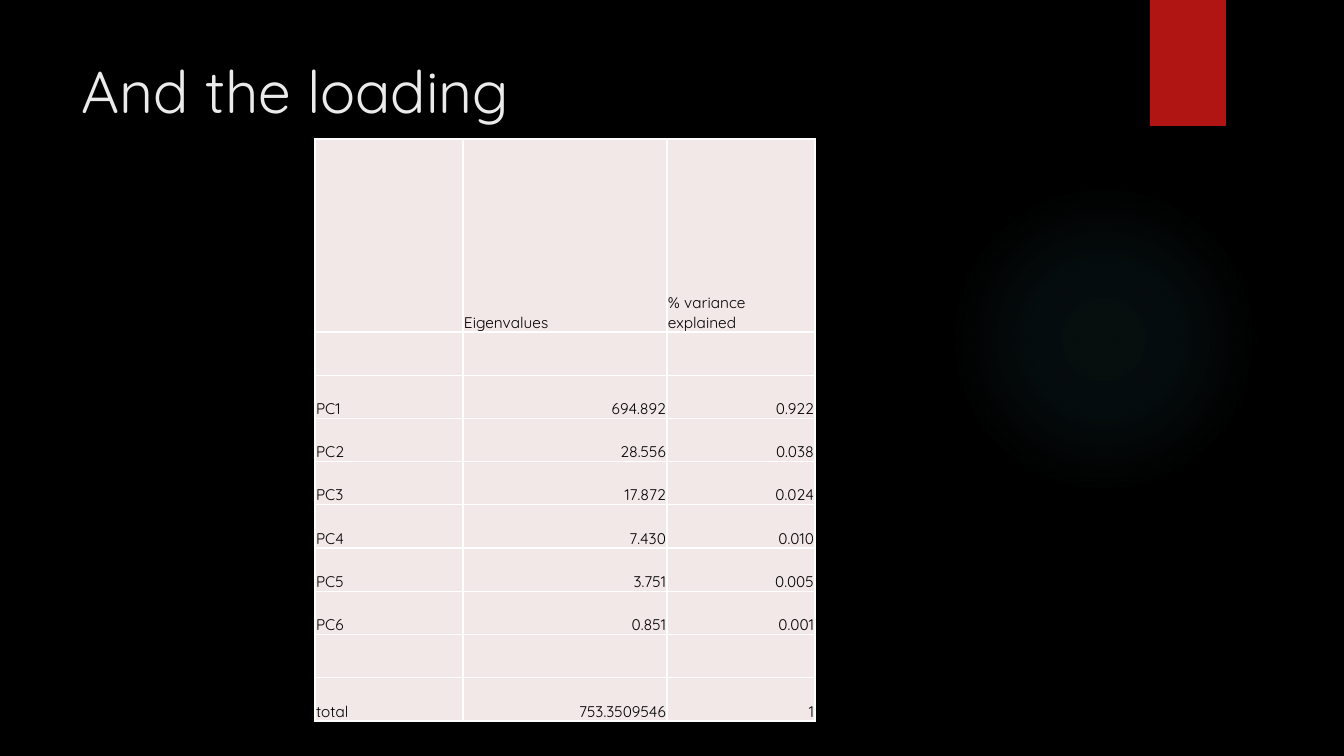
from pptx import Presentation
from pptx.dml.color import RGBColor
from pptx.enum.shapes import MSO_SHAPE
from pptx.enum.text import MSO_ANCHOR, PP_ALIGN
from pptx.oxml import parse_xml
from pptx.oxml.ns import nsdecls
from pptx.util import Pt

RECTANGLE, OVAL = MSO_SHAPE.RECTANGLE, MSO_SHAPE.OVAL
TOP, BOTTOM = MSO_ANCHOR.TOP, MSO_ANCHOR.BOTTOM
LEFT, RIGHT = PP_ALIGN.LEFT, PP_ALIGN.RIGHT
PX = 914400 / 100.8  # EMU per pixel


def rgb(hex_code):
    return RGBColor.from_string(hex_code)


def write(frame, text, size, color, align=LEFT, font="Quicksand"):
    paragraph = frame.paragraphs[0]
    paragraph.alignment = align
    run = paragraph.add_run()
    run.text = text
    run.font.size = Pt(size)
    run.font.name = font
    run.font.color.rgb = rgb(color)


prs = Presentation()
prs.slide_width, prs.slide_height = round(1344 * PX), round(756 * PX)
slide = prs.slides.add_slide(prs.slide_layouts[6])
slide.background.fill.solid()
slide.background.fill.fore_color.rgb = rgb("000000")

# Faint round glow
glow = slide.shapes.add_shape(OVAL, *[round(v * PX) for v in (949, 184, 310, 310)])
stops = "".join(
    f'<a:gs pos="{position * 1000}"><a:srgbClr val="50B9C1">'
    f'<a:alpha val="{opacity * 1000}"/></a:srgbClr></a:gs>'
    for position, opacity in [(0, 7), (36, 6), (69, 0)]
)
glow._element.spPr.append(parse_xml(
    f'<a:gradFill {nsdecls("a")}><a:gsLst>{stops}</a:gsLst><a:path path="circle">'
    '<a:fillToRect l="50000" t="50000" r="50000" b="50000"/></a:path></a:gradFill>'
))
glow.line.fill.background()
glow.shadow.inherit = False

# Red ribbon
ribbon = slide.shapes.add_shape(RECTANGLE, *[round(v * PX) for v in (1150, 0, 76, 126)])
ribbon.fill.solid()
ribbon.fill.fore_color.rgb = rgb("B01513")
ribbon.line.fill.background()
ribbon.shadow.inherit = False

# Title
title = slide.shapes.add_textbox(*[round(v * PX) for v in (72, 50, 1037, 154)]).text_frame
title.word_wrap = True
title.vertical_anchor = TOP
write(title, "And the loading", size=42, color="EBEBEB")

# Loadings table
loadings = [
    ("", "Eigenvalues", "% variance explained"),
    ("", "", ""),
    ("PC1", "694.892", "0.922"),
    ("PC2", "28.556", "0.038"),
    ("PC3", "17.872", "0.024"),
    ("PC4", "7.430", "0.010"),
    ("PC5", "3.751", "0.005"),
    ("PC6", "0.851", "0.001"),
    ("", "", ""),
    ("total", "753.3509546", "1"),
]
column_widths = [148, 204, 148]
table_height, header_height = 582, 193
row_height = (table_height - header_height) / (len(loadings) - 1)
table = slide.shapes.add_table(
    len(loadings), len(column_widths),
    *[round(v * PX) for v in (315, 139, sum(column_widths), table_height)],
).table
table.first_row = table.horz_banding = False
for column, width in zip(table.columns, column_widths):
    column.width = round(width * PX)

for r, values in enumerate(loadings):
    table.rows[r].height = round((row_height if r else header_height) * PX)
    for c, value in enumerate(values):
        cell = table.cell(r, c)
        cell.vertical_anchor = BOTTOM
        cell.margin_left = cell.margin_right = cell.margin_top = round(PX)
        cell.margin_bottom = 0
        for side in "LRTB":
            cell._tc.get_or_add_tcPr().append(parse_xml(
                f'<a:ln{side} {nsdecls("a")} w="12700"><a:solidFill>'
                f'<a:srgbClr val="FFFFFF"/></a:solidFill></a:ln{side}>'
            ))
        cell.fill.solid()
        cell.fill.fore_color.rgb = rgb("F2E8E7")
        if value:
            write(cell.text_frame, value, size=11, color="000000",
                  align=RIGHT if r and c else LEFT)

prs.save("out.pptx")
